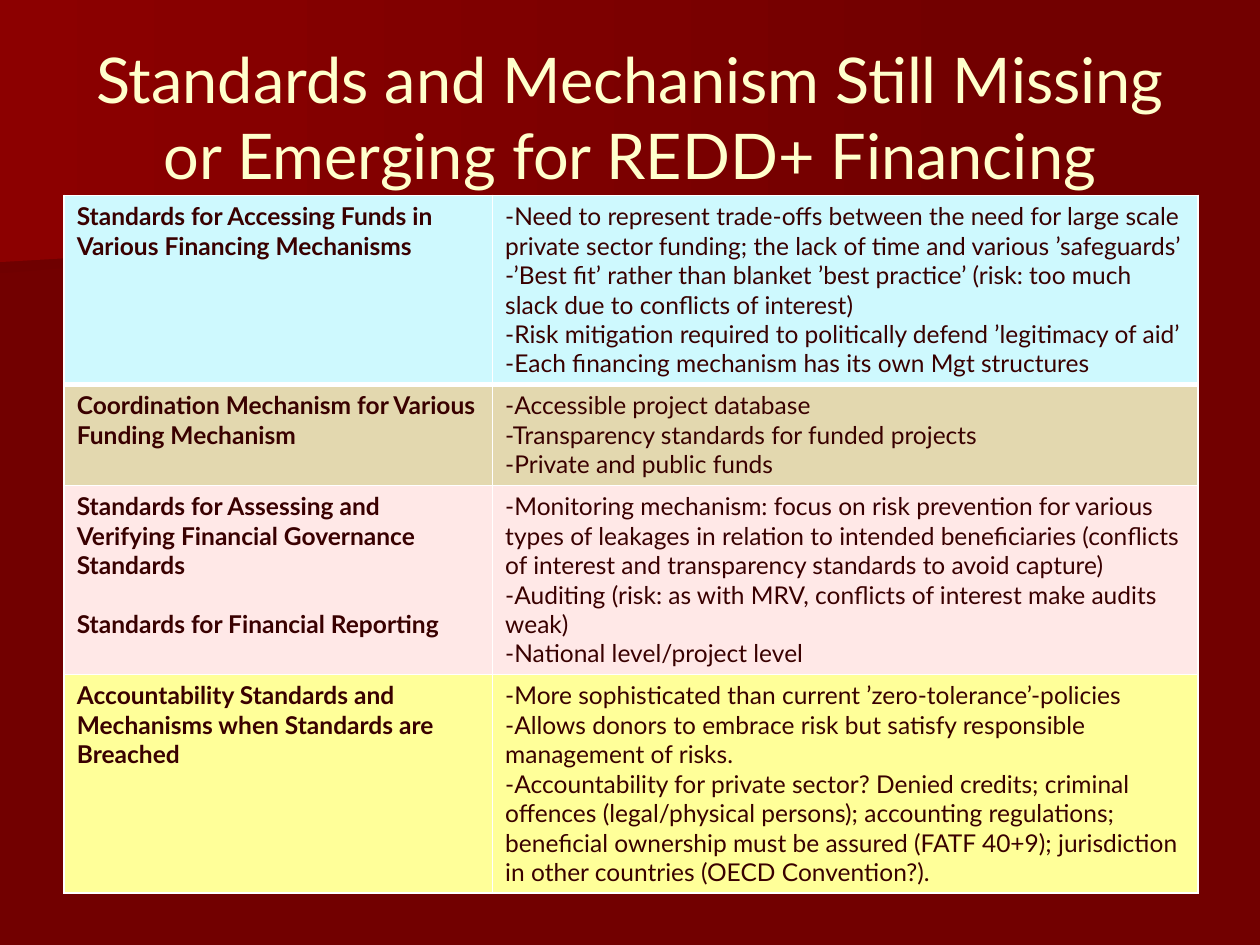
from lxml import etree
from pptx import Presentation
from pptx import util as u
from pptx.dml.color import RGBColor
from pptx.enum import text
from pptx.oxml import ns

FONT, INK, WHITE = "Lato", "390000", "FFFFFF"
LINE, MARGINS = 0.233, 0.1  # inches: one 14 pt line, cell top + bottom margins


def rgb(h):
    return RGBColor.from_string(h)


def border(cell, side, width):
    ln = etree.SubElement(cell._tc.get_or_add_tcPr(), ns.qn("a:ln" + side), w=str(u.Pt(width)))
    fill = etree.SubElement(ln, ns.qn("a:solidFill"))
    etree.SubElement(fill, ns.qn("a:srgbClr"), val=WHITE)


# fill, lines of text in the row, headings, points
ROWS = [
    ("CEF9FE", 6, ["Standards for Accessing Funds in Various Financing Mechanisms"],
     ["-Need to represent trade-offs between the need for large scale private sector funding; "
      "the lack of time and various ’safeguards’",
      "-’Best fit’ rather than blanket ’best practice’ (risk: too much slack due to conflicts of interest)",
      "-Risk mitigation required to politically defend ’legitimacy of aid’",
      "-Each financing mechanism has its own Mgt structures"]),
    ("E3D8AF", 3, ["Coordination Mechanism for Various Funding Mechanism"],
     ["-Accessible project database",
      "-Transparency standards for funded projects",
      "-Private and public funds"]),
    ("FFE8E7", 6, ["Standards for Assessing and Verifying Financial Governance Standards",
                   "Standards for Financial Reporting"],
     ["-Monitoring mechanism: focus on risk prevention for various types of leakages in relation to "
      "intended beneficiaries (conflicts of interest and transparency standards to avoid capture)",
      "-Auditing (risk: as with MRV, conflicts of interest make audits weak)",
      "-National level/project level"]),
    ("FFFF99", 7, ["Accountability Standards and Mechanisms when Standards are Breached"],
     ["-More sophisticated than current ’zero-tolerance’-policies",
      "-Allows donors to embrace risk but satisfy responsible management of risks.",
      "-Accountability for private sector? Denied credits; criminal offences (legal/physical persons); "
      "accounting regulations; beneficial ownership must be assured (FATF 40+9); "
      "jurisdiction in other countries (OECD Convention?)."]),
]

prs = Presentation()
prs.slide_width, prs.slide_height = u.Inches(10), u.Inches(7.5)
s = prs.slides.add_slide(prs.slide_layouts[5])
s.background.fill.solid()
s.background.fill.fore_color.rgb = rgb("720000")

# Background beams, in hundredths of an inch, placed behind the title
BEAMS = [
    ("6F0000", [(778, 153), (0, 217), (0, 101), (779, 101), (778, 128)]),
    ("8C0000", [(792, 162), (0, 208), (0, 0), (792, 0)]),
]
for i, (color, points) in enumerate(BEAMS):
    fb = s.shapes.build_freeform(*points[0], scale=u.Inches(0.01))
    fb.add_line_segments(points[1:], close=True)
    beam = fb.convert_to_shape()
    beam.shadow.inherit = False
    beam.line.fill.background()
    beam.fill.gradient()
    beam.fill.gradient_angle = 0
    for stop, c, pos in zip(beam.fill.gradient_stops, (color, "720000"), (0, 1)):
        stop.color.rgb = rgb(c)
        stop.position = pos
    s.shapes._spTree.insert(2 + i, beam._element)

# Title
title = s.shapes.title
title.left, title.top, title.width, title.height = map(u.Inches, (0.5, 0.3, 9, 1.25))
tf = title.text_frame
tf.text = "Standards and Mechanism Still Missing or Emerging for REDD+ Financing"
tf.vertical_anchor = text.MSO_ANCHOR.MIDDLE
p = tf.paragraphs[0]
p.alignment = text.PP_ALIGN.CENTER
p.font.name, p.font.size, p.font.color.rgb = FONT, u.Pt(36), rgb("FFFFCC")

# Table: row heights follow from the number of text lines
heights = [n * LINE + MARGINS for _, n, _, _ in ROWS]
table = s.shapes.add_table(len(ROWS), 2, *map(u.Inches, (0.51, 1.55, 9, sum(heights)))).table
table.first_row = table.horz_banding = False
for col, width in zip(table.columns, (3.4, 5.6)):
    col.width = u.Inches(width)

for r, (color, _, *columns) in enumerate(ROWS):
    table.rows[r].height = u.Inches(heights[r])
    for c, paragraphs in enumerate(columns):
        cell = table.cell(r, c)
        for side in "LRTB":
            thick = (r, side) in ((0, "B"), (1, "T"))
            border(cell, side, 3 if thick else 1)
        cell.fill.solid()
        cell.fill.fore_color.rgb = rgb(color)
        tf = cell.text_frame
        tf.text = "\n".join(paragraphs)
        for i, p in enumerate(tf.paragraphs):
            p.font.name, p.font.size, p.font.color.rgb = FONT, u.Pt(14), rgb(INK)
            p.font.bold = c == 0
            if c == 0 and i:  # one line of space between headings
                p.space_before = u.Pt(16.8)

prs.save("out.pptx")
